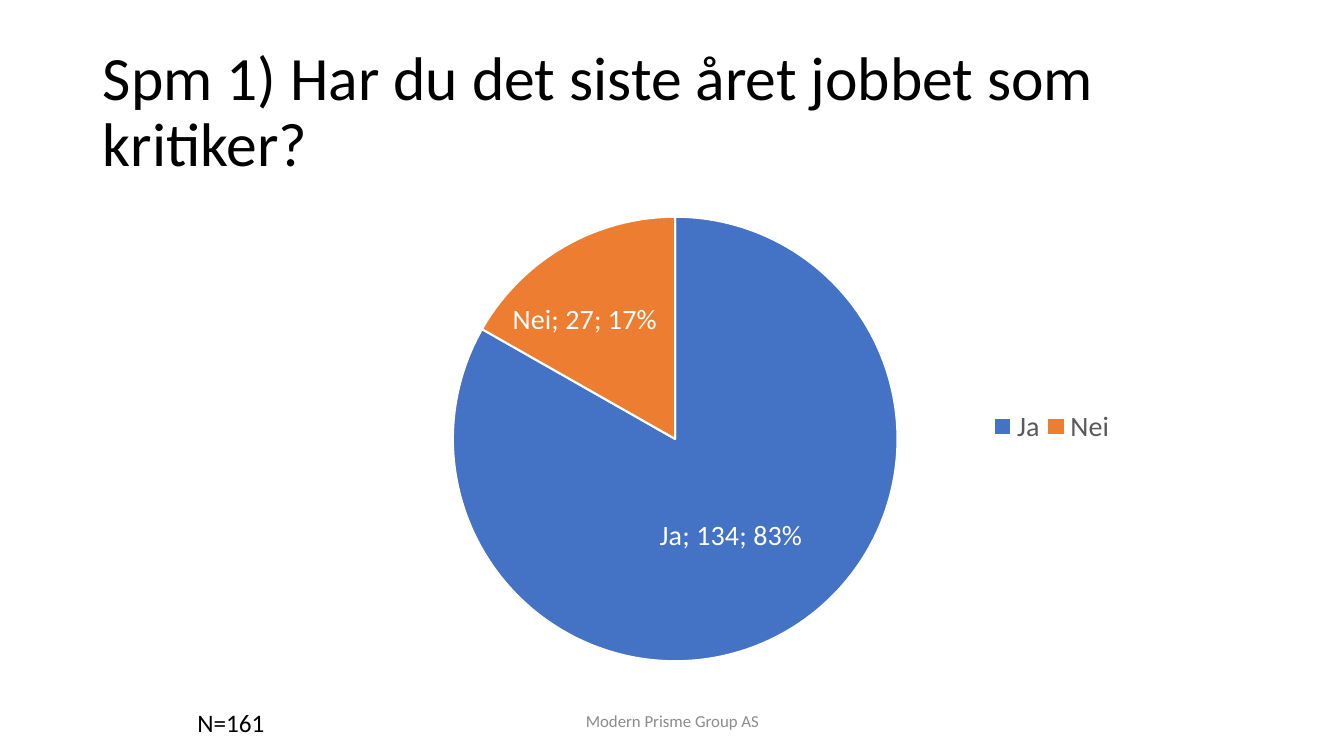
"""Build a slide with a pie chart of how many worked as critics in the last year."""
from copy import deepcopy
from dataclasses import dataclass

from lxml import etree
from pptx import Presentation
from pptx.chart.data import CategoryChartData
from pptx.dml.color import RGBColor
from pptx.enum import chart as charts, text
from pptx.oxml import ns
from pptx.util import Inches, Pt

TITLE = "Spm 1) Har du det siste året jobbet som kritiker?"
ANSWERS = {"Ja": 134, "Nei": 27}
FOOTER = "Modern Prisme Group AS"
SAMPLE = f"N={sum(ANSWERS.values())}"

TITLE_BOX = (0.92, 0.4, 11.5, 1.45)
CHART_BOX = (2.17, 1.76, 9, 4.95)
PIE_BOX = (4.49, 2.15, 4.41, 4.41)
LEGEND_BOX = (9.78, 4.03, 1.3, 0.4)
FOOTER_BOX = (4.42, 6.95, 4.5, 0.4)
SAMPLE_BOX = (1.86, 6.97, 0.87, 0.4)
SMALL_SLICE = 1
LABEL_SHIFT = (-0.34, -0.23)


@dataclass(frozen=True)
class Theme:
    """Fonts, type sizes and colours of the slide."""
    font: str = "Calibri"
    title: int = 44
    chart: int = 20
    sample: int = 18
    footer: int = 12
    black: str = "000000"
    white: str = "FFFFFF"
    legend: str = "595959"
    muted: str = "8C8C8C"
    slices: tuple = ("4472C4", "ED7D31")


THEME = Theme()


def style(font, size, color):
    """Apply the theme font with a size and colour."""
    font.name, font.size = THEME.font, Pt(size)
    font.color.rgb = RGBColor.from_string(color)


def place(shape, box):
    """Move and size a shape from lengths in inches."""
    shape.left, shape.top, shape.width, shape.height = map(Inches, box)


def write(shape, content, size, color):
    """Set one paragraph of text and return it."""
    shape.text_frame.text = content
    para = shape.text_frame.paragraphs[0]
    style(para.runs[0].font, size, color)
    return para


def manual_layout(**settings):
    """Return a chart layout element with the given settings."""
    layout = etree.Element(ns.qn("c:layout"))
    manual = etree.SubElement(layout, ns.qn("c:manualLayout"))
    for name, value in settings.items():
        shown = value if isinstance(value, str) else f"{value:.3f}"
        etree.SubElement(manual, ns.qn(f"c:{name}"), val=shown)
    return layout


def box_layout(box, **target):
    """Return a layout that puts a chart part at a slide position."""
    left, top, width, height = CHART_BOX
    return manual_layout(
        **target, xMode="edge", yMode="edge",
        x=(box[0] - left) / width, y=(box[1] - top) / height,
        w=box[2] / width, h=box[3] / height)


def set_layout(parent, layout, index):
    """Replace the layout of a chart part."""
    for old in parent.findall(ns.qn("c:layout")):
        parent.remove(old)
    parent.insert(index, layout)


def shift_label(labels, index, shift):
    """Move one label by a distance in inches, keeping the shared format."""
    label = etree.Element(ns.qn("c:dLbl"))
    etree.SubElement(label, ns.qn("c:idx"), val=str(index))
    label.append(manual_layout(x=shift[0] / CHART_BOX[2], y=shift[1] / CHART_BOX[3]))
    for part in labels:
        if part.tag != ns.qn("c:showLeaderLines"):
            label.append(deepcopy(part))
    labels.insert(0, label)


def add_pie(page):
    """Add the pie chart with its labels and legend."""
    data = CategoryChartData()
    data.categories = list(ANSWERS)
    data.add_series("Series 1", list(ANSWERS.values()))
    chart = page.shapes.add_chart(
        charts.XL_CHART_TYPE.PIE, *map(Inches, CHART_BOX), data).chart
    chart.has_title = False
    style(chart.font, THEME.chart, THEME.black)

    plot = chart.plots[0]
    plot.vary_by_categories = True
    series = plot.series[0]
    for index, color in enumerate(THEME.slices):
        form = series.points[index].format
        form.fill.solid()
        form.fill.fore_color.rgb = RGBColor.from_string(color)
        form.line.color.rgb = RGBColor.from_string(THEME.white)
        form.line.width = Pt(1.5)

    labels = series.data_labels
    labels.show_category_name = labels.show_value = labels.show_percentage = True
    labels.position = charts.XL_LABEL_POSITION.CENTER
    style(labels.font, THEME.chart, THEME.white)
    separator = etree.Element(ns.qn("c:separator"))
    separator.text = "; "
    series._element.find(".//" + ns.qn("c:showBubbleSize")).addnext(separator)
    shift_label(separator.getparent(), SMALL_SLICE, LABEL_SHIFT)

    chart.has_legend = True
    chart.legend.position = charts.XL_LEGEND_POSITION.RIGHT
    chart.legend.include_in_layout = False
    style(chart.legend.font, THEME.chart, THEME.legend)
    set_layout(chart.legend._element, box_layout(LEGEND_BOX), 1)
    plot_area = chart._chartSpace.find(".//" + ns.qn("c:plotArea"))
    set_layout(plot_area, box_layout(PIE_BOX, layoutTarget="inner"), 0)


def main():
    """Compose and save the slide."""
    deck = Presentation()
    deck.slide_width, deck.slide_height = Inches(13.33), Inches(7.5)
    page = deck.slides.add_slide(deck.slide_layouts[5])

    title = page.shapes.title
    place(title, TITLE_BOX)
    para = write(title, TITLE, THEME.title, THEME.black)
    para.alignment = text.PP_ALIGN.LEFT
    para.line_spacing = 0.9
    title.text_frame.vertical_anchor = text.MSO_ANCHOR.MIDDLE

    add_pie(page)

    footer = page.shapes.add_textbox(*map(Inches, FOOTER_BOX))
    footer.text_frame.word_wrap = True
    footer.text_frame.vertical_anchor = text.MSO_ANCHOR.MIDDLE
    para = write(footer, FOOTER, THEME.footer, THEME.muted)
    para.alignment = text.PP_ALIGN.CENTER

    sample = page.shapes.add_textbox(*map(Inches, SAMPLE_BOX))
    sample.text_frame.word_wrap = False
    sample.text_frame.auto_size = text.MSO_AUTO_SIZE.SHAPE_TO_FIT_TEXT
    write(sample, SAMPLE, THEME.sample, THEME.black)

    deck.save("out.pptx")


if __name__ == "__main__":
    main()
